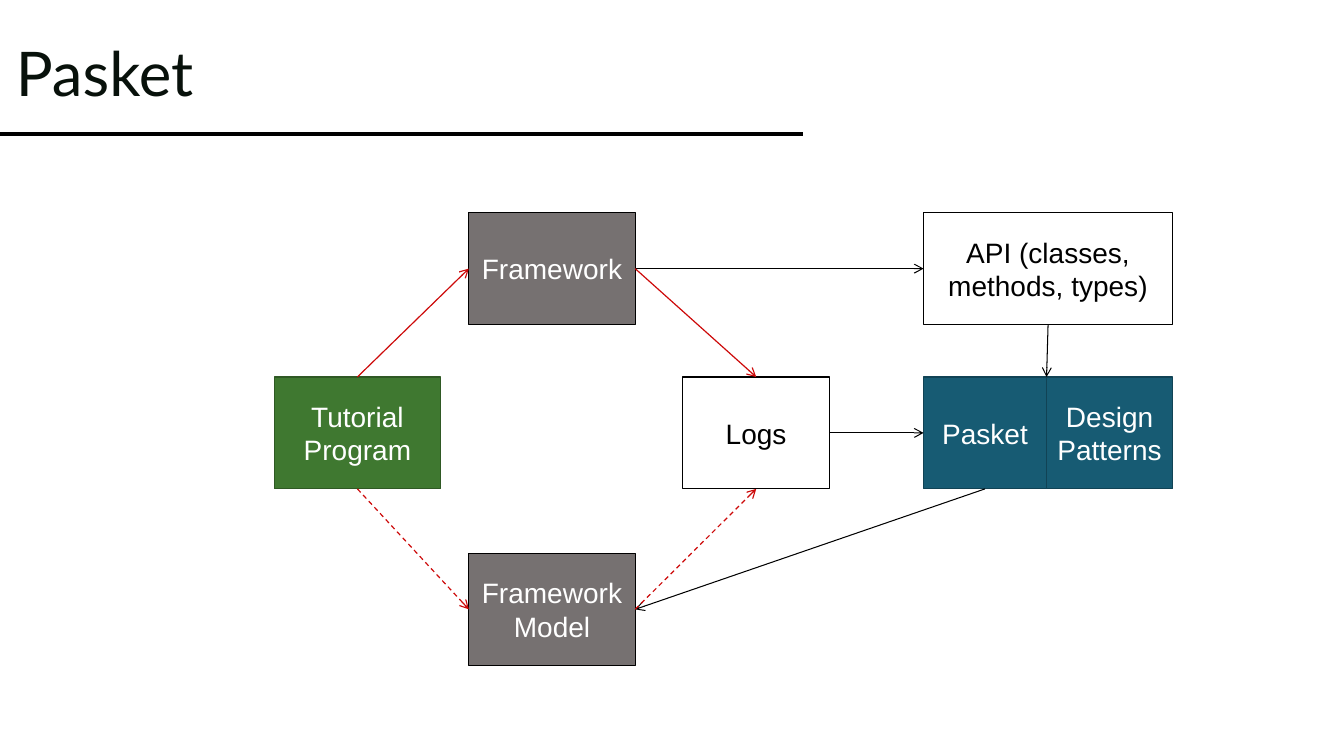
import pptx
import pptx.dml.color
import pptx.enum.dml
import pptx.enum.shapes
import pptx.enum.text
import pptx.oxml
import pptx.oxml.ns
import pptx.util

Inches = pptx.util.Inches
Pt = pptx.util.Pt

THEME = {
    "black": "000000", "white": "FFFFFF", "title": "08110B", "flow": "CD0909",
    "grey": "767171", "green": "3F7830", "green_edge": "2F5924",
    "blue": "175B73", "blue_edge": "114355",
    "title_font": "Lato", "body_font": "Arial", "title_size": 44, "body_size": 20,
    "rule_width": 2.25, "box_line": 0.85, "data_line": 0.75,
}
TITLE = "Pasket"
TITLE_AREA = (0.06, 0.03, 7.51, 1.45)
RULE = ((0, 1.33), (7.96, 1.33))
BOX_HEIGHT = 1.11
ROWS = {"top": 2.11, "middle": 3.74, "bottom": 5.49}
STYLES = {
    "framework": ("grey", "black", "white"),
    "program": ("green", "green_edge", "white"),
    "data": ("white", "black", "black"),
    "tool": ("blue", "blue_edge", "white"),
}
BOXES = {
    "framework": ("Framework", 4.65, "top", 1.65, "framework"),
    "tutorial": ("Tutorial\nProgram", 2.72, "middle", 1.65, "program"),
    "api": ("API (classes, methods, types)", 9.16, "top", 2.47, "data"),
    "patterns": ("Design Patterns", 10.38, "middle", 1.25, "tool"),
    "logs": ("Logs", 6.77, "middle", 1.46, "data"),
    "pasket": ("Pasket", 9.16, "middle", 1.22, "tool"),
    "model": ("Framework Model", 4.65, "bottom", 1.65, "framework"),
}
TOP, LEFT, BOTTOM, RIGHT, CORNER = range(5)
ARROWS = [
    ("framework", RIGHT, "api", LEFT, "data"),
    ("logs", RIGHT, "pasket", LEFT, "data"),
    ("api", BOTTOM, "patterns", CORNER, "data"),
    ("pasket", BOTTOM, "model", RIGHT, "data"),
    ("framework", RIGHT, "logs", TOP, "run"),
    ("tutorial", TOP, "framework", LEFT, "run"),
    ("tutorial", BOTTOM, "model", LEFT, "model run"),
    ("model", RIGHT, "logs", BOTTOM, "model run"),
]
ARROW_STYLES = {
    "data": ("black", "data_line", False),
    "run": ("flow", "box_line", False),
    "model run": ("flow", "box_line", True),
}


def color(name):
    return pptx.dml.color.RGBColor.from_string(THEME[name])


def write_text(shape, text, font="body_font", size="body_size", ink="black",
               align=pptx.enum.text.PP_ALIGN.CENTER, inset=0.05, spacing=1.0):
    frame = shape.text_frame
    frame.word_wrap = True
    frame.vertical_anchor = pptx.enum.text.MSO_ANCHOR.MIDDLE
    frame.margin_left = frame.margin_right = Inches(inset)
    frame.text = text
    for paragraph in frame.paragraphs:
        paragraph.alignment = align
        paragraph.line_spacing = spacing
        for run in paragraph.runs:
            run.font.name = THEME[font]
            run.font.size = Pt(THEME[size])
            run.font.color.rgb = color(ink)


def add_box(slide, text, left, row, width, style):
    fill, edge, ink = STYLES[style]
    shape = slide.shapes.add_shape(
        pptx.enum.shapes.MSO_SHAPE.RECTANGLE,
        Inches(left), Inches(ROWS[row]), Inches(width), Inches(BOX_HEIGHT))
    shape.shadow.inherit = False
    shape.fill.solid()
    shape.fill.fore_color.rgb = color(fill)
    shape.line.color.rgb = color(edge)
    shape.line.width = Pt(THEME["box_line"])
    write_text(shape, text, ink=ink)
    return shape


def add_line(slide, begin, end, ink, width, dashed=False, arrow=False):
    line = slide.shapes.add_connector(
        pptx.enum.shapes.MSO_CONNECTOR.STRAIGHT, *begin, *end)
    line.line.color.rgb = color(ink)
    line.line.width = Pt(THEME[width])
    if dashed:
        line.line.dash_style = pptx.enum.dml.MSO_LINE.DASH
    properties = line._element.spPr
    if arrow:
        outline = properties.find(pptx.oxml.ns.qn("a:ln"))
        head = pptx.oxml.parse_xml(
            "<a:tailEnd %s type='arrow'/>" % pptx.oxml.ns.nsdecls("a"))
        outline.append(head)
    properties.append(pptx.oxml.parse_xml(
        "<a:effectLst %s/>" % pptx.oxml.ns.nsdecls("a")))
    return line


def anchor(shape, side):
    across = {LEFT: 0, CORNER: 0, RIGHT: shape.width}.get(side, shape.width // 2)
    down = {TOP: 0, CORNER: 0, BOTTOM: shape.height}.get(side, shape.height // 2)
    return shape.left + across, shape.top + down


def main():
    presentation = pptx.Presentation()
    presentation.slide_width = Inches(13.33)
    presentation.slide_height = Inches(7.5)
    slide = presentation.slides.add_slide(presentation.slide_layouts[6])

    rule_begin, rule_end = [tuple(map(Inches, point)) for point in RULE]
    add_line(slide, rule_begin, rule_end, "black", "rule_width")
    title = slide.shapes.add_textbox(*map(Inches, TITLE_AREA))
    write_text(title, TITLE, font="title_font", size="title_size", ink="title",
               align=pptx.enum.text.PP_ALIGN.LEFT, inset=0.1, spacing=0.9)

    boxes = {name: add_box(slide, *details) for name, details in BOXES.items()}
    for source, source_side, target, target_side, style in ARROWS:
        ink, width, dashed = ARROW_STYLES[style]
        arrow = add_line(slide, anchor(boxes[source], source_side),
                         anchor(boxes[target], target_side),
                         ink, width, dashed, arrow=True)
        arrow.begin_connect(boxes[source], source_side)
        if target_side != CORNER:
            arrow.end_connect(boxes[target], target_side)

    presentation.save("out.pptx")


if __name__ == "__main__":
    main()
